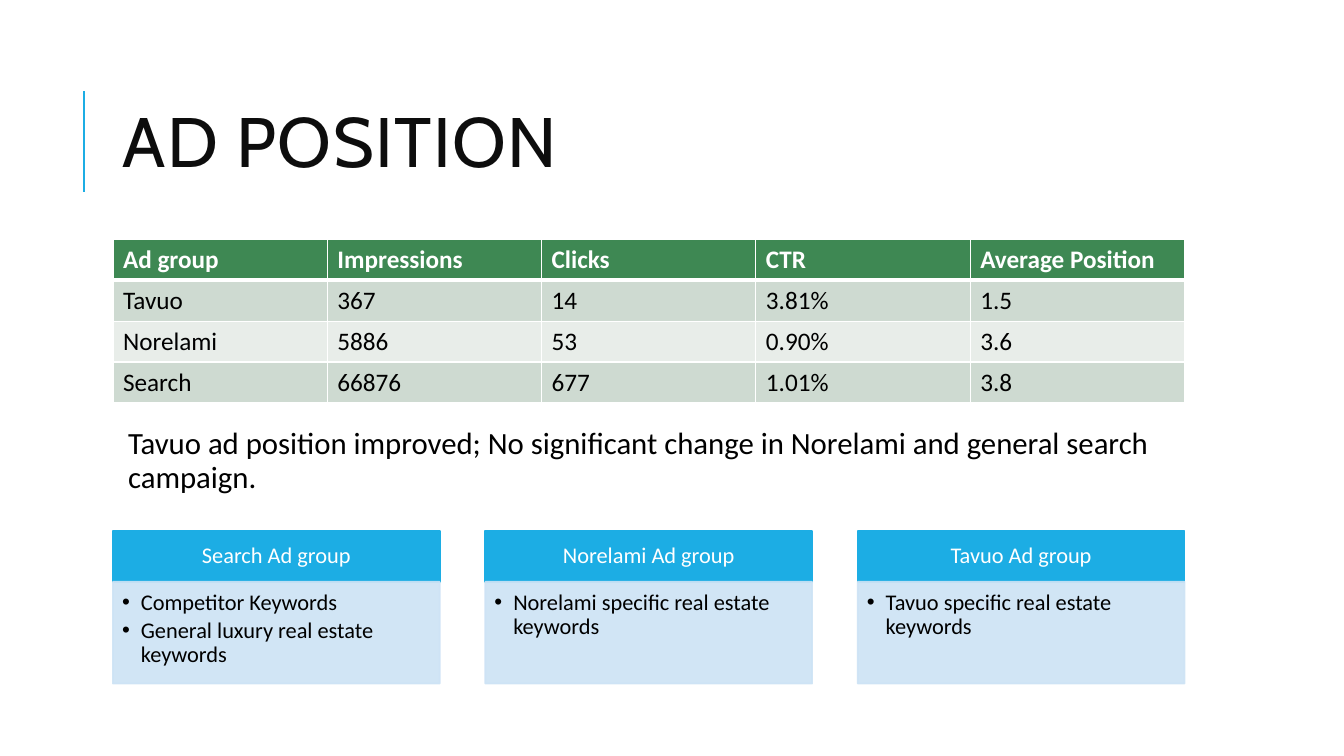
from lxml.etree import SubElement
from pptx import Presentation
from pptx.dml.color import RGBColor
from pptx.enum.shapes import MSO_CONNECTOR, MSO_SHAPE
from pptx.enum.text import MSO_ANCHOR, PP_ALIGN
from pptx.oxml.ns import qn
from pptx.util import Pt

WHITE = RGBColor(0xFF, 0xFF, 0xFF)
BLACK = RGBColor(0x00, 0x00, 0x00)
TITLE_INK = RGBColor(0x0D, 0x0D, 0x0D)
BLUE = RGBColor(0x1C, 0xAD, 0xE4)
PALE_BLUE = RGBColor(0xCD, 0xE3, 0xF5)
GREEN = RGBColor(0x3E, 0x88, 0x53)
BANDS = [RGBColor(0xE8, 0xED, 0xE9), RGBColor(0xCE, 0xDA, 0xD1)]

LEFT, WIDTH = 80.7, 765.4
ROW_HEIGHT = 29.2
CARD_WIDTH = 233.4
CARD_STEP = (WIDTH - CARD_WIDTH) / 2
CARD_TOP, HEADING_HEIGHT, DETAIL_HEIGHT = 379.4, 36.2, 72.7

AD_GROUPS = [
    ["Ad group", "Impressions", "Clicks", "CTR", "Average Position"],
    ["Tavuo", "367", "14", "3.81%", "1.5"],
    ["Norelami", "5886", "53", "0.90%", "3.6"],
    ["Search", "66876", "677", "1.01%", "3.8"],
]
CARDS = [
    ("Search Ad group", ["Competitor Keywords", "General luxury real estate keywords"]),
    ("Norelami Ad group", ["Norelami specific real estate keywords"]),
    ("Tavuo Ad group", ["Tavuo specific real estate keywords"]),
]


def style_text(paragraph, size, color, font="Calibri", bold=False):
    for run in paragraph.runs:
        run.font.size = Pt(size)
        run.font.name = font
        run.font.bold = bold
        run.font.color.rgb = color


def add_panel(left, top, height, color, insets):
    """Add a filled card rectangle with the given left, top, right and bottom insets."""
    panel = slide.shapes.add_shape(
        MSO_SHAPE.RECTANGLE, Pt(left), Pt(top), Pt(CARD_WIDTH), Pt(height))
    panel.shadow.inherit = False
    panel.fill.solid()
    panel.fill.fore_color.rgb = color
    panel.line.color.rgb = color
    panel.line.width = Pt(1.25)
    frame = panel.text_frame
    frame.word_wrap = True
    frame.margin_left, frame.margin_top, frame.margin_right, frame.margin_bottom = map(Pt, insets)
    return panel


presentation = Presentation()
presentation.slide_width = Pt(960)
presentation.slide_height = Pt(540)
slide = presentation.slides.add_slide(presentation.slide_layouts[6])

# Title and its accent line
accent = slide.shapes.add_connector(
    MSO_CONNECTOR.STRAIGHT, Pt(60), Pt(136.8), Pt(60), Pt(64.8))
accent.line.color.rgb = BLUE
accent.line.width = Pt(1.5)
SubElement(accent._element.spPr, qn("a:effectLst"))

title = slide.shapes.add_textbox(Pt(LEFT), Pt(46), Pt(WIDTH), Pt(118)).text_frame
title.word_wrap = True
title.vertical_anchor = MSO_ANCHOR.MIDDLE
title.text = "AD POSITION"
title.paragraphs[0].line_spacing = 0.8
style_text(title.paragraphs[0], 50, TITLE_INK, "Cabin")
title.paragraphs[0].runs[0].font._element.set("spc", "100")

# Finding
finding = slide.shapes.add_textbox(Pt(LEFT), Pt(302.4), Pt(WIDTH), Pt(60)).text_frame
finding.word_wrap = True
finding.margin_left = Pt(10.8)
finding.margin_top = finding.margin_right = finding.margin_bottom = Pt(3.6)
finding.text = ("Tavuo ad position improved; No significant change in Norelami "
                "and general search campaign.")
finding.paragraphs[0].line_spacing = 0.9
style_text(finding.paragraphs[0], 22, BLACK)

# Results by ad group
results = slide.shapes.add_table(
    len(AD_GROUPS), len(AD_GROUPS[0]), Pt(LEFT), Pt(171),
    Pt(WIDTH), Pt(ROW_HEIGHT * len(AD_GROUPS))).table
results.first_row = False
results.horz_banding = False
for row, values in enumerate(AD_GROUPS):
    results.rows[row].height = Pt(ROW_HEIGHT)
    is_header = row == 0
    borders = {"a:lnL": 1, "a:lnR": 1,
               "a:lnT": 3 if row == 1 else 1, "a:lnB": 3 if is_header else 1}
    for column, value in enumerate(values):
        cell = results.cell(row, column)
        cell.text = value
        style_text(cell.text_frame.paragraphs[0], 18,
                   WHITE if is_header else BLACK, bold=is_header)
        properties = cell._tc.get_or_add_tcPr()
        for side, weight in borders.items():
            border = SubElement(properties, qn(side), w=str(Pt(weight)))
            border_fill = SubElement(border, qn("a:solidFill"))
            SubElement(border_fill, qn("a:srgbClr"), val=str(WHITE))
        cell.fill.solid()
        cell.fill.fore_color.rgb = GREEN if is_header else BANDS[row % 2]

# Keyword cards
for index, (group, keywords) in enumerate(CARDS):
    left = LEFT + index * CARD_STEP

    heading = add_panel(left, CARD_TOP, HEADING_HEIGHT, BLUE, (8.6, 5, 8.6, 5)).text_frame
    heading.vertical_anchor = MSO_ANCHOR.MIDDLE
    heading.text = group
    heading.paragraphs[0].alignment = PP_ALIGN.CENTER
    heading.paragraphs[0].line_spacing = 0.9
    style_text(heading.paragraphs[0], 16, WHITE)

    detail = add_panel(left, CARD_TOP + HEADING_HEIGHT, DETAIL_HEIGHT,
                       PALE_BLUE, (6.5, 6.5, 8.6, 10))
    for color in detail._element.spPr.iter(qn("a:srgbClr")):
        SubElement(color, qn("a:alpha"), val="90000")
    detail.text_frame.vertical_anchor = MSO_ANCHOR.TOP
    detail.text_frame.text = "\n".join(keywords)
    for keyword in detail.text_frame.paragraphs:
        keyword.alignment = PP_ALIGN.LEFT
        keyword.line_spacing = 0.9
        keyword.space_after = Pt(3)
        style_text(keyword, 16, BLACK)
        properties = keyword._p.get_or_add_pPr()
        properties.set("marL", str(Pt(13.5)))
        properties.set("indent", str(Pt(-13.5)))
        SubElement(properties, qn("a:buFont"), typeface="Arial")
        SubElement(properties, qn("a:buChar"), char="•")

presentation.save("out.pptx")
